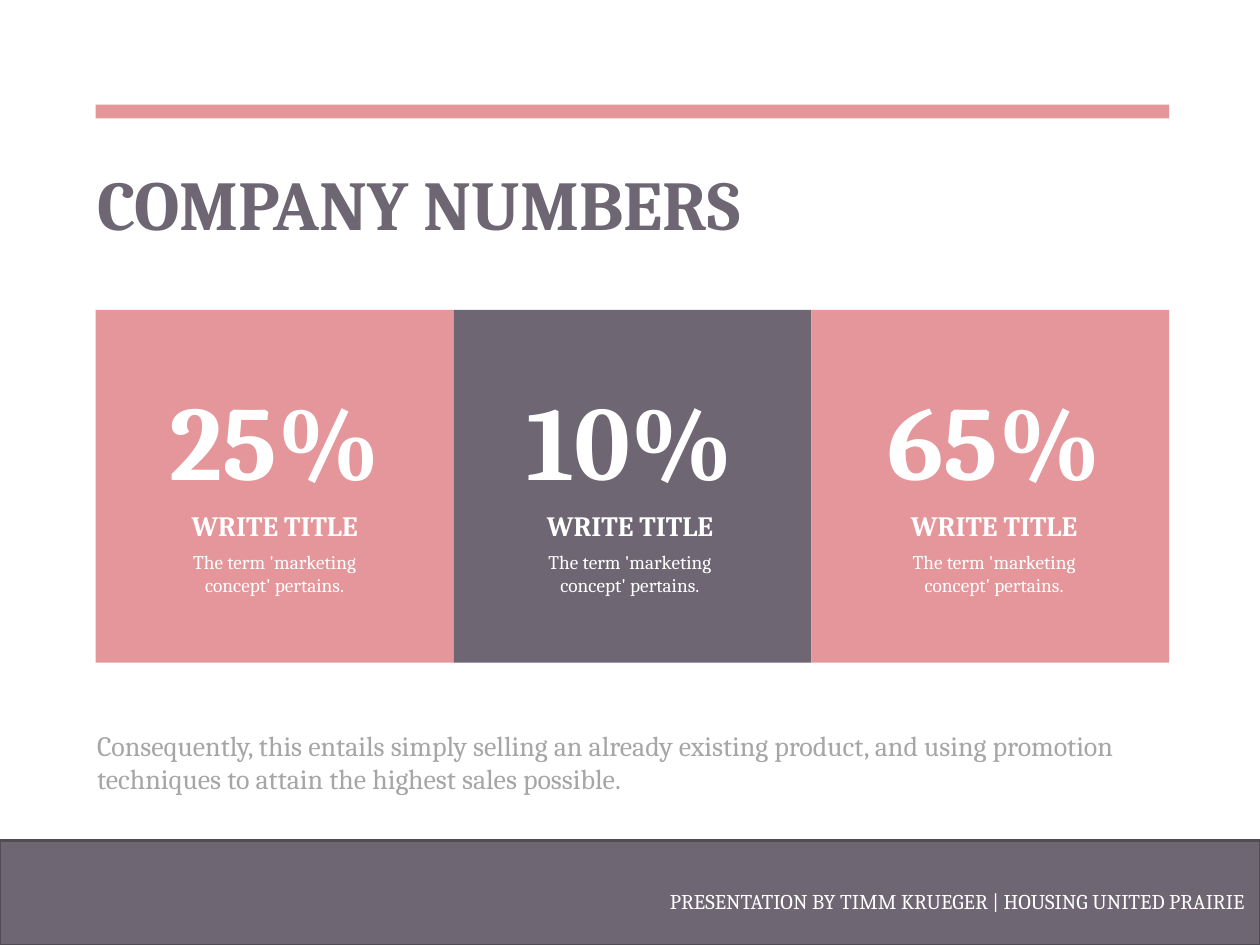
from lxml.etree import SubElement
from pptx import Presentation
from pptx.dml.color import RGBColor
from pptx.enum.shapes import MSO_SHAPE
from pptx.enum.text import MSO_ANCHOR, MSO_AUTO_SIZE, PP_ALIGN
from pptx.oxml.ns import qn
from pptx.util import Inches, Pt

PINK = RGBColor(0xE5, 0x96, 0x9B)
PLUM = RGBColor(0x6E, 0x66, 0x73)
DARK_PLUM = RGBColor(0x51, 0x4B, 0x55)
GRAY = RGBColor(0xA6, 0xA6, 0xA6)
WHITE = RGBColor(0xFF, 0xFF, 0xFF)

# Grid in inches
MARGIN = 0.76
TEXT_LEFT = 0.67
PANEL_TOP, PANEL_WIDTH, PANEL_HEIGHT = 2.46, 2.84, 2.8
FOOTER_TOP = 6.67

presentation = Presentation()
presentation.slide_width = Inches(10)
presentation.slide_height = Inches(7.5)
slide = presentation.slides.add_slide(presentation.slide_layouts[1])


def add_block(left, top, width, height, color):
    shape = slide.shapes.add_shape(
        MSO_SHAPE.RECTANGLE, Inches(left), Inches(top), Inches(width), Inches(height))
    shape.shadow.inherit = False
    shape.fill.solid()
    shape.fill.fore_color.rgb = color
    shape.line.fill.background()
    return shape


def write_text(box, place, text, size, color, bold=False, align=PP_ALIGN.LEFT):
    for name, value in zip(("left", "top", "width", "height"), place):
        setattr(box, name, Inches(value))
    frame = box.text_frame
    frame.text = text
    frame_format = {"word_wrap": True, "auto_size": MSO_AUTO_SIZE.NONE,
                    "vertical_anchor": MSO_ANCHOR.TOP}
    for name, value in frame_format.items():
        setattr(frame, name, value)
    paragraph = frame.paragraphs[0]
    paragraph.alignment = align
    paragraph.space_before = Pt(0)
    font_format = {"name": "Cambria", "size": Pt(size), "bold": bold}
    for name, value in font_format.items():
        setattr(paragraph.runs[0].font, name, value)
    paragraph.runs[0].font.color.rgb = color
    return paragraph


# Top rule and title
add_block(MARGIN, 0.83, 3 * PANEL_WIDTH, 0.11, PINK)
write_text(slide.shapes.title, (TEXT_LEFT, 1.22, 6.41, 0.77),
           "COMPANY NUMBERS", 40, PLUM, bold=True)

# Number panels: value, fill, center of the text column
panels = [("25%", PINK, 2.18), ("10%", PLUM, 5.0), ("65%", PINK, 7.89)]
for column, (value, color, center) in enumerate(panels):
    add_block(MARGIN + column * PANEL_WIDTH, PANEL_TOP, PANEL_WIDTH, PANEL_HEIGHT, color)
    lines = [
        (value, 2.93, 2.27, 1.11, 60, True),
        ("WRITE TITLE", 3.99, 2.11, 0.37, 16, True),
        ("The term 'marketing concept' pertains.", 4.32, 1.64, 0.47, 11, False),
    ]
    for text, top, width, height, size, bold in lines:
        box = slide.shapes.add_textbox(0, 0, 0, 0)
        write_text(box, (center - width / 2, top, width, height),
                   text, size, WHITE, bold, PP_ALIGN.CENTER)

# Summary in the body placeholder, without a bullet
summary = write_text(
    slide.placeholders[1], (TEXT_LEFT, 5.73, 8.63, 0.94),
    "Consequently, this entails simply selling an already existing product, "
    "and using promotion techniques to attain the highest sales possible.", 16, GRAY)
properties = summary._p.get_or_add_pPr()
properties.set("marL", "0")
properties.set("indent", "0")
SubElement(properties, qn("a:buNone"))

# Footer band and credit
footer = add_block(0, FOOTER_TOP, 10, 7.5 - FOOTER_TOP, PLUM)
footer.line.color.rgb = DARK_PLUM
footer.line.width = Pt(1.5)
credit = write_text(
    slide.shapes.add_textbox(0, 0, 0, 0), (4.59, 6.9, 5.39, 0.38),
    "PRESENTATION BY TIMM KRUEGER | HOUSING UNITED PRAIRIE", 12, WHITE,
    align=PP_ALIGN.RIGHT)
credit.line_spacing = 1.5

presentation.save("out.pptx")
